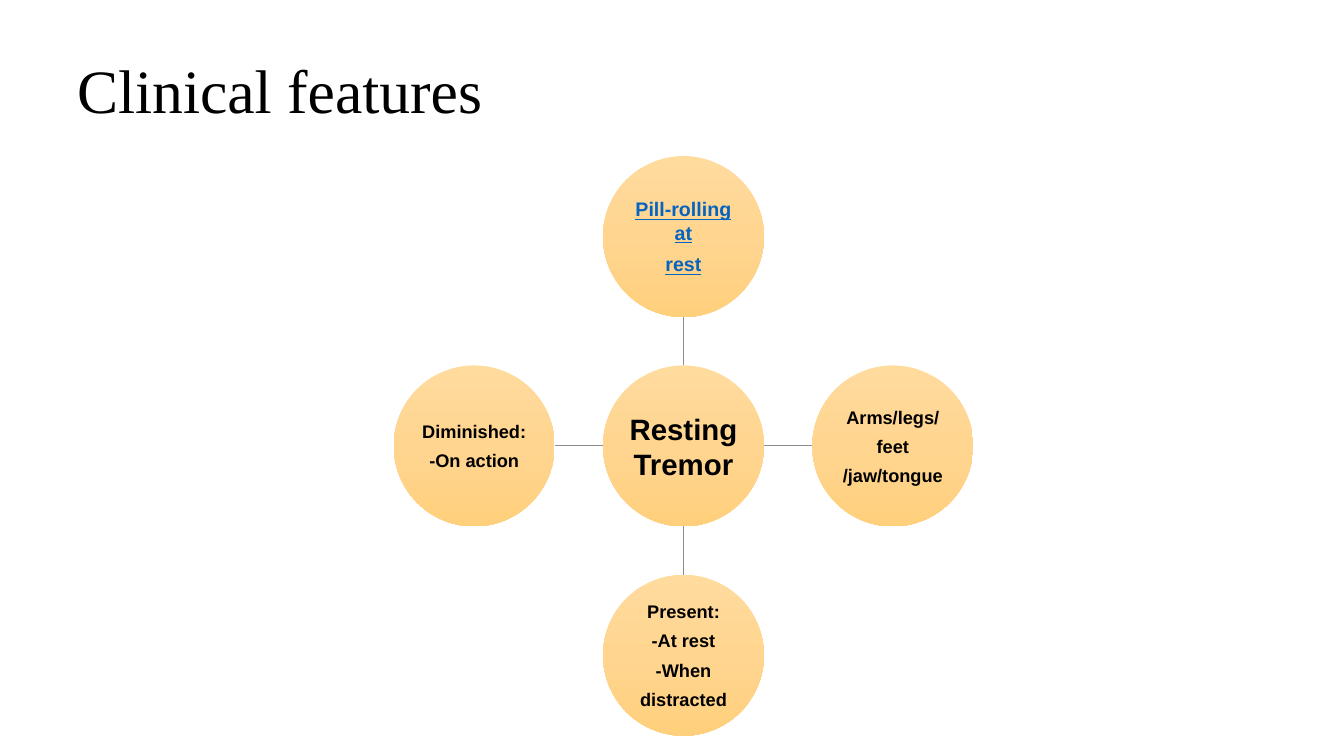
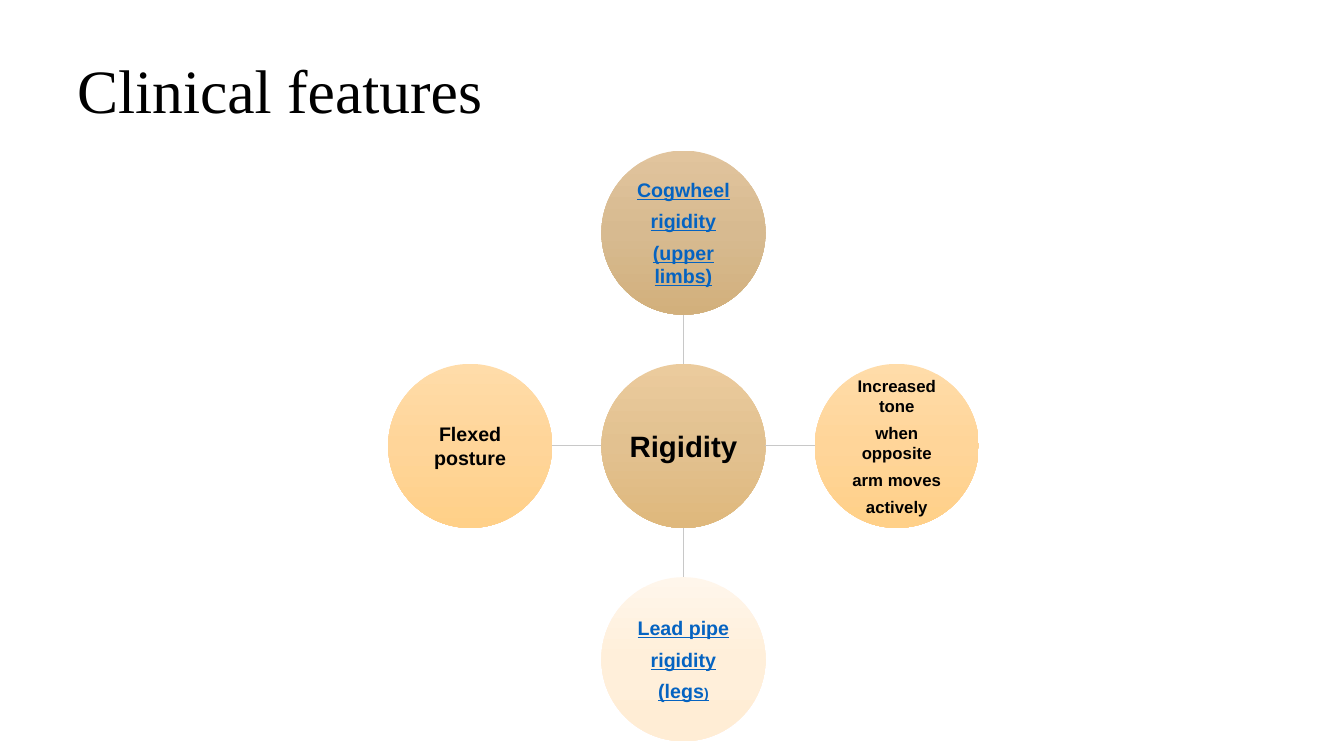
from copy import deepcopy

from pptx import Presentation
from pptx.dml.color import RGBColor
from pptx.enum.shapes import MSO_CONNECTOR, MSO_SHAPE
from pptx.enum.text import MSO_ANCHOR, PP_ALIGN
from pptx.oxml.ns import qn
from pptx.oxml.xmlchemy import OxmlElement
from pptx.util import Pt

# Shared style
TITLE_FONT, BODY_FONT = "Times New Roman", "Arial"
BLACK, LINK_BLUE = "000000", "0563C1"
TITLE_BOX = (48, 21.6, 864, 90)
WHEEL_CENTRE = (488.2, 318.5)
PITCH_RATIO = 1.3      # distance between circle centres, in diameters
GAP_RATIO = 0.4        # space after a paragraph, in font sizes
DIRECTIONS = ((0, -1), (1, 0), (0, 1), (-1, 0))  # top, right, bottom, left

# Gradients, top to bottom
AMBER = ("FFDB9E", "FFD590", "FFD07C")
SOFT_AMBER = ("FFDCA9", "FFD599", "FFD088")
TAN = ("EBCB9D", "E2C190", "DFB87C")
DARK_TAN = ("E1C49D", "D7BA90", "D2B07C")
CREAM = ("FFF6EB", "FFEFDA", "FFEDD5")


def color(hex_text):
    return RGBColor.from_string(hex_text)


def write(shape, paragraphs, *, size, font=BODY_FONT, ink=BLACK, bold=False,
          underline=False, align=PP_ALIGN.CENTER, spacing=None, gap=0, inset=0.8):
    """Fill a shape with paragraphs; each is a string or a list of (text, size)."""
    frame = shape.text_frame
    frame.word_wrap = True
    frame.vertical_anchor = MSO_ANCHOR.MIDDLE
    frame.margin_left = frame.margin_right = Pt(inset)
    frame.margin_top = frame.margin_bottom = Pt(inset)
    for index, content in enumerate(paragraphs):
        para = frame.paragraphs[0] if index == 0 else frame.add_paragraph()
        para.alignment = align
        if spacing:
            para.line_spacing = spacing
        if index < len(paragraphs) - 1:
            para.space_after = Pt(gap)
        pieces = [(content, size)] if isinstance(content, str) else content
        for text, text_size in pieces:
            span = para.add_run()
            span.text = text
            span.font.name = font
            span.font.size = Pt(text_size)
            span.font.bold = bold
            span.font.underline = underline
            span.font.color.rgb = color(ink)


def fill_gradient(shape, colors):
    shape.fill.gradient()
    shape.fill.gradient_angle = 270
    stop_list = shape.element.spPr.find(qn("a:gradFill")).find(qn("a:gsLst"))
    stop_list.insert(1, deepcopy(stop_list[0]))
    for stop, position, hex_text in zip(shape.fill.gradient_stops, (0, 0.5, 1), colors):
        stop.position = position
        stop.color.rgb = color(hex_text)


def add_title(page, text, box):
    title = page.shapes.add_textbox(*map(Pt, box))
    write(title, [text], size=44, font=TITLE_FONT, align=PP_ALIGN.LEFT,
          spacing=0.9, inset=7.2)


def add_circle(page, centre, diameter, gradient, paragraphs, size, **text_format):
    left, top = (value - diameter / 2 for value in centre)
    circle = page.shapes.add_shape(
        MSO_SHAPE.OVAL, Pt(left), Pt(top), Pt(diameter), Pt(diameter))
    circle.shadow.inherit = False
    circle.line.fill.background()
    fill_gradient(circle, gradient)
    write(circle, paragraphs, size=size, bold=True, **text_format)


def add_spoke(page, start, end, line_color):
    spoke = page.shapes.add_connector(
        MSO_CONNECTOR.STRAIGHT, *map(Pt, (*start, *end)))
    spoke.line.color.rgb = color(line_color)
    spoke.line.width = Pt(0.75)
    spoke.element.spPr.append(OxmlElement("a:effectLst"))


def add_wheel(page, centre, diameter, line_color, hub, satellites):
    """Draw a hub circle with one satellite on each side."""
    def along(direction, distance):
        return tuple(c + d * distance for c, d in zip(centre, direction))

    pitch = PITCH_RATIO * diameter
    hub_gradient, hub_text = hub
    add_circle(page, centre, diameter, hub_gradient, hub_text, 21)
    for direction, (gradient, paragraphs, size, linked) in zip(DIRECTIONS, satellites):
        add_spoke(page, along(direction, diameter / 2),
                  along(direction, pitch - diameter / 2), line_color)
        add_circle(page, along(direction, pitch), diameter, gradient, paragraphs, size,
                   ink=LINK_BLUE if linked else BLACK, underline=linked,
                   gap=GAP_RATIO * size)


# Slide content; satellites are (gradient, paragraphs, size, looks like a link)
WHEELS = (
    dict(
        diameter=115, line_color="8C8C8C",
        hub=(AMBER, ["Resting", "Tremor"]),
        satellites=(
            (AMBER, ["Pill-rolling at", "rest"], 14, True),
            (AMBER, ["Arms/legs/", "feet", "/jaw/tongue"], 13, False),
            (AMBER, ["Present:", "-At rest", "-When", "distracted"], 13, False),
            (AMBER, ["Diminished:", "-On action"], 13, False),
        ),
    ),
    dict(
        diameter=117.2, line_color="C8C8C8",
        hub=(TAN, ["Rigidity"]),
        satellites=(
            (DARK_TAN, ["Cogwheel", "rigidity", "(upper limbs)"], 14, True),
            (SOFT_AMBER, ["Increased tone", "when opposite", "arm moves", "actively"],
             12, False),
            (CREAM, ["Lead pipe", "rigidity", [("(legs", 14), (")", 10)]], 14, True),
            (SOFT_AMBER, ["Flexed posture"], 14, False),
        ),
    ),
)


def main():
    deck = Presentation()
    deck.slide_width, deck.slide_height = Pt(960), Pt(540)
    for wheel in WHEELS:
        page = deck.slides.add_slide(deck.slide_layouts[6])
        add_title(page, "Clinical features", TITLE_BOX)
        add_wheel(page, WHEEL_CENTRE, **wheel)
    deck.save("out.pptx")


if __name__ == "__main__":
    main()
